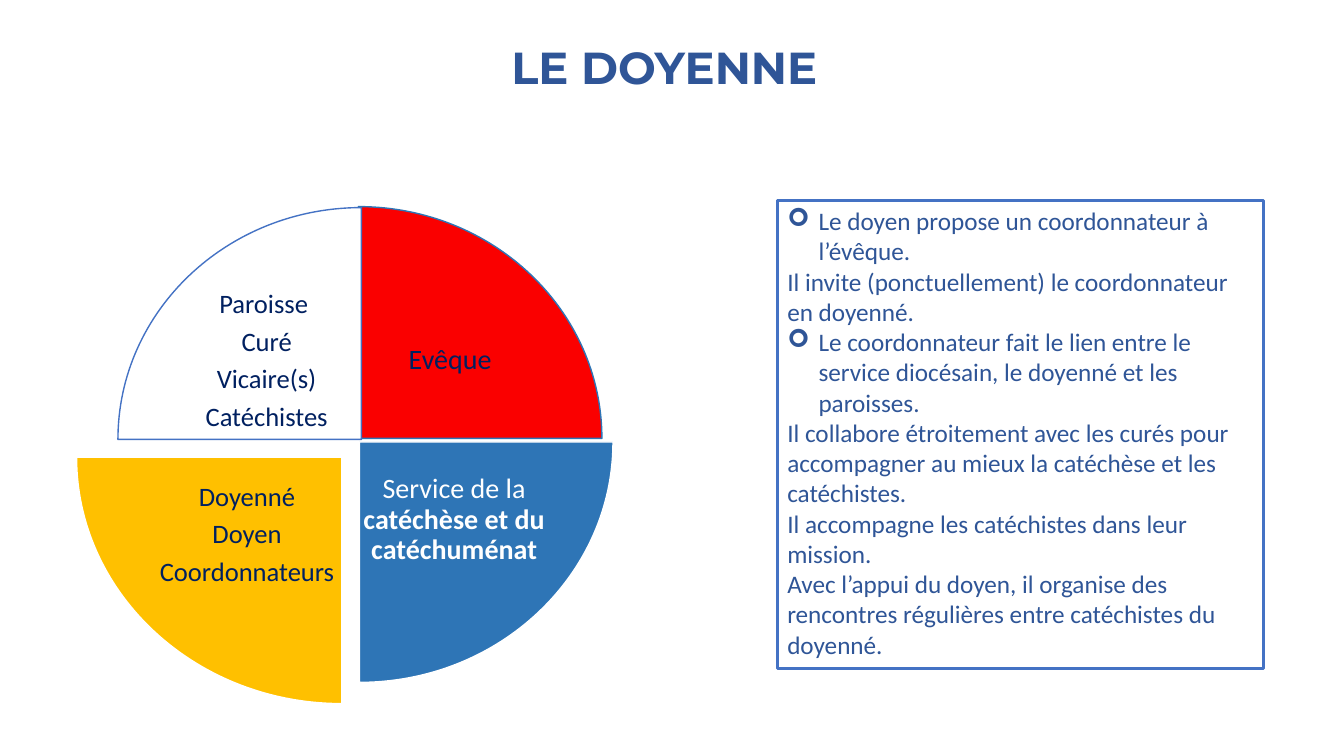
from dataclasses import dataclass

from lxml.etree import SubElement
from pptx import Presentation
from pptx.dml.color import RGBColor
from pptx.enum.shapes import MSO_SHAPE
from pptx.enum.text import MSO_ANCHOR, MSO_AUTO_SIZE, PP_ALIGN
from pptx.oxml.ns import qn
from pptx.util import Inches, Pt

COLORS = {
    "white": "FFFFFF",
    "red": "FA0000",
    "blue": "2E75B6",
    "yellow": "FFC000",
    "outline": "4472C4",
    "heading": "2F5597",
    "navy": "002060",
}
KAPPA = 0.5523  # Bezier handle length for a quarter ellipse


@dataclass
class Quarter:
    """Quarter of the ellipse that fills the frame."""
    frame: tuple[float, float, float, float]  # left, top, width, height
    direction: tuple[int, int]  # right or left, down or up
    fill: str
    line: str
    margins: tuple[float, float, float, float]  # left, top, right, bottom
    lines: list[list[tuple[str, bool]]]  # paragraphs of (text, bold)
    size: int
    ink: str


@dataclass
class Note:
    text: str
    bullet: bool = False


QUARTERS = [
    Quarter((1.14, 2.05, 4.83, 4.6), (1, -1), "red", "blue",
            (2.4, 0.89, 0.58, 2.43), [[("Evêque", False)]], 20, "navy"),
    Quarter((1.05, 2, 5.03, 4.77), (1, 1), "blue", "white",
            (2.43, 2.43, 0.55, 0.88),
            [[("Service de la ", False), ("catéchèse et du catéchuménat", True)]],
            20, "white"),
    Quarter((0.76, 2.09, 5.26, 4.89), (-1, 1), "yellow", "white",
            (0.55, 2.43, 2.43, 0.88),
            [[("Doyenné", False)], [("Doyen", False)], [("Coordonnateurs", False)]],
            19, "navy"),
    Quarter((1.17, 2.06, 4.83, 4.6), (-1, -1), "white", "outline",
            (0.55, 0.88, 2.43, 2.43),
            [[("Paroisse ", False)], [("Curé", False)], [("Vicaire(s)", False)],
             [("Catéchistes", False)]], 19, "navy"),
]

NOTES = [
    Note("Le doyen propose un coordonnateur à l’évêque.", True),
    Note("Il invite (ponctuellement) le coordonnateur en doyenné."),
    Note("Le coordonnateur fait le lien entre le service diocésain, le doyenné "
         "et les paroisses.", True),
    Note("Il collabore étroitement avec les curés pour accompagner au mieux la "
         "catéchèse et les catéchistes."),
    Note("Il accompagne les catéchistes dans leur mission."),
    Note("Avec l’appui du doyen, il organise des rencontres régulières entre "
         "catéchistes du doyenné."),
]


def rgb(name: str) -> RGBColor:
    return RGBColor.from_string(COLORS[name])


def set_font(para, name: str, size: int, color: str) -> None:
    para.font.name = name
    para.font.size = Pt(size)
    para.font.color.rgb = rgb(color)


def paint(shape, fill: str, line: str, width: float) -> None:
    shape.shadow.inherit = False
    shape.fill.solid()
    shape.fill.fore_color.rgb = rgb(fill)
    shape.line.color.rgb = rgb(line)
    shape.line.width = Pt(width)


def add_title(page, text: str) -> None:
    title = page.shapes.title
    title.left, title.top = Inches(0.91), Inches(0.4)
    title.width, title.height = Inches(11.36), Inches(0.84)
    frame = title.text_frame
    frame.text = text
    frame.vertical_anchor = MSO_ANCHOR.TOP
    para = frame.paragraphs[0]
    para.alignment = PP_ALIGN.CENTER
    para.line_spacing = 0.9
    para.space_before = Pt(0)
    set_font(para, "Montserrat", 32, "heading")
    para.font.bold = True


def add_quarter_shape(page, quarter: Quarter):
    left, top, width, height = map(Inches, quarter.frame)
    across, down = quarter.direction

    def point(x: float, y: float) -> tuple[int, int]:
        """Place a point given in radii from the centre of the frame."""
        return (round(width * (1 + across * x) / 2),
                round(height * (1 + down * y) / 2))

    builder = page.shapes.build_freeform(*point(1, 0))
    builder.add_line_segments([point(0, 1), point(0, 0)], close=True)
    shape = builder.convert_to_shape()
    shape.left, shape.top, shape.width, shape.height = left, top, width, height

    # Curved outline, measured in the whole frame
    outline = next(shape._element.iter(qn("a:path")))
    outline.set("w", str(width))
    outline.set("h", str(height))
    for child in list(outline):
        outline.remove(child)
    for tag, points in (
        ("a:moveTo", [(1, 0)]),
        ("a:cubicBezTo", [(1, KAPPA), (KAPPA, 1), (0, 1)]),
        ("a:lnTo", [(0, 0)]),
        ("a:close", []),
    ):
        step = SubElement(outline, qn(tag))
        for x, y in (point(*pair) for pair in points):
            SubElement(step, qn("a:pt"), x=str(x), y=str(y))
    return shape


def add_quarter(page, quarter: Quarter) -> None:
    shape = add_quarter_shape(page, quarter)
    paint(shape, quarter.fill, quarter.line, 1)
    frame = shape.text_frame
    frame.word_wrap = True
    frame.vertical_anchor = MSO_ANCHOR.MIDDLE
    (frame.margin_left, frame.margin_top,
     frame.margin_right, frame.margin_bottom) = map(Inches, quarter.margins)
    for index, spans in enumerate(quarter.lines):
        para = frame.add_paragraph() if index else frame.paragraphs[0]
        para.alignment = PP_ALIGN.CENTER
        para.line_spacing = 0.9
        para.space_after = Pt(6.4)
        set_font(para, "Calibri", quarter.size, quarter.ink)
        for text, bold in spans:
            span = para.add_run()
            span.text = text
            span.font.bold = bold


def add_notes_box(page, notes: list[Note]) -> None:
    box = page.shapes.add_shape(MSO_SHAPE.RECTANGLE, Inches(7.71), Inches(1.99),
                                Inches(4.82), Inches(4.64))
    paint(box, "white", "outline", 2.25)
    frame = box.text_frame
    frame.word_wrap = True
    frame.auto_size = MSO_AUTO_SIZE.SHAPE_TO_FIT_TEXT
    frame.vertical_anchor = MSO_ANCHOR.TOP
    for index, note in enumerate(notes):
        para = frame.add_paragraph() if index else frame.paragraphs[0]
        para.text = note.text
        para.alignment = PP_ALIGN.LEFT
        if note.bullet:
            properties = para._p.get_or_add_pPr()
            properties.set("marL", str(Inches(0.31)))
            properties.set("indent", str(-Inches(0.31)))
            SubElement(properties, qn("a:buFont")).set("typeface", "Wingdings")
            SubElement(properties, qn("a:buChar")).set("char", "➢")
        set_font(para, "Calibri", 18, "heading")


def main() -> None:
    deck = Presentation()
    deck.slide_width, deck.slide_height = Inches(13.33), Inches(7.5)
    page = deck.slides.add_slide(deck.slide_layouts[5])
    page.background.fill.solid()
    page.background.fill.fore_color.rgb = rgb("white")

    # Heading
    add_title(page, "LE DOYENNE")
    # Wheel of the four partners
    for quarter in QUARTERS:
        add_quarter(page, quarter)
    # Role of the coordinator
    add_notes_box(page, NOTES)

    deck.save("out.pptx")


if __name__ == "__main__":
    main()
